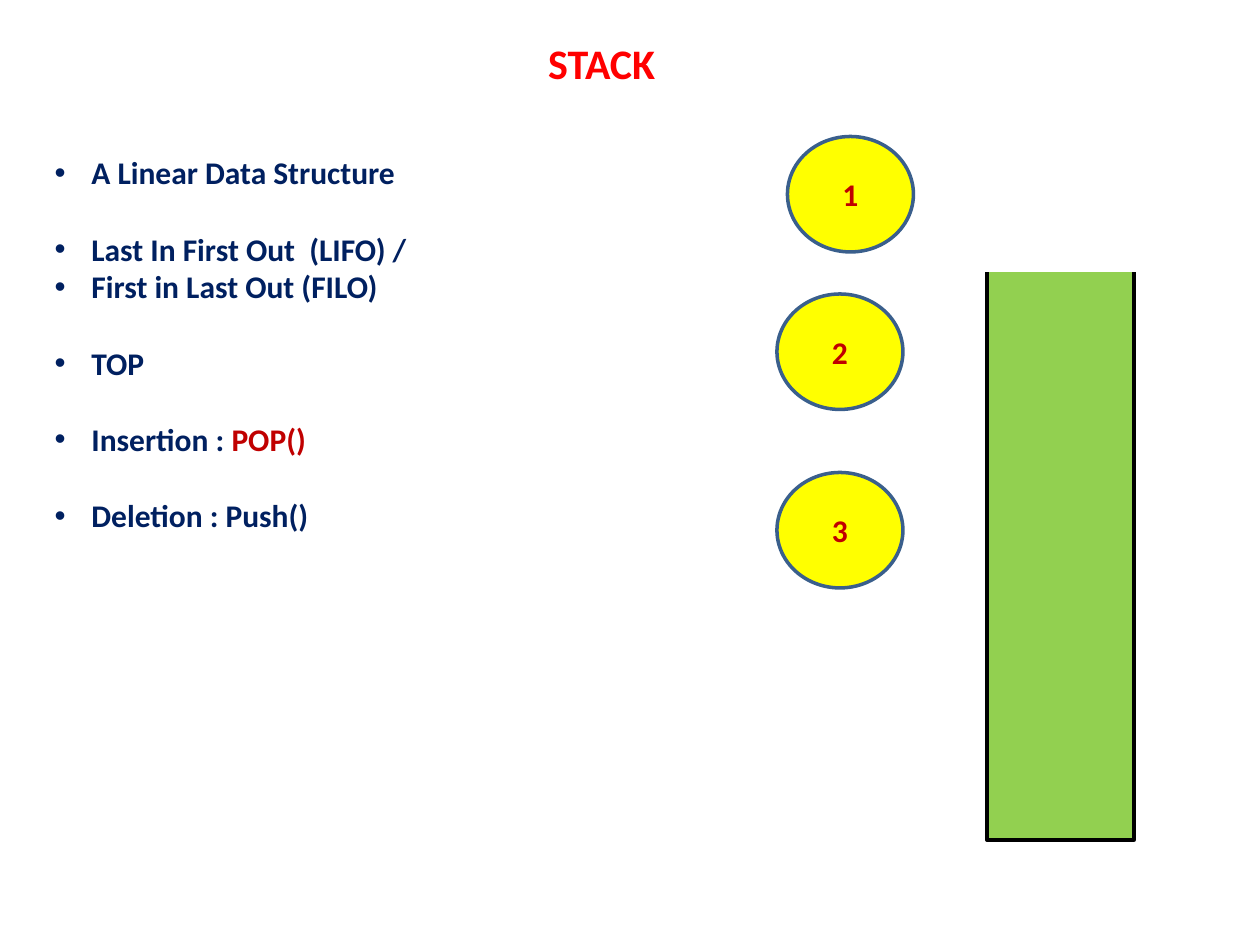
from pptx import Presentation
from pptx import util as u
from pptx.dml.color import RGBColor
from pptx.enum import shapes, text

NAVY, CRIMSON, RED = "002060", "C00000", "FF0000"
YELLOW, GREEN, BLUE = "FFFF00", "92D050", "3A5F8C"
BLACK, WHITE = "000000", "FFFFFF"
GAP = 22  # one text line between groups of points
INDENT = 21

# Each point: space before, then its runs of (wording, colour)
POINTS = [
    (0, [("A Linear Data Structure", NAVY)]),
    (GAP, [("Last In First Out  (LIFO) /", NAVY)]),
    (0, [("First in Last Out (FILO)", NAVY)]),
    (GAP, [("TOP", NAVY)]),
    (GAP, [("Insertion : ", NAVY), ("POP()", CRIMSON)]),
    (GAP, [("Deletion : Push()", NAVY)]),
]
# Stack items: label, left, top
ITEMS = [("1", 450, 78), ("2", 444, 168), ("3", 444, 270)]


def color(value):
    return RGBColor.from_string(value)


def apply_format(target, values):
    for name, value in values.items():
        setattr(target, name, value)


def place(shape, left, top, width, height):
    names = ("left", "top", "width", "height")
    apply_format(shape, dict(zip(names, map(u.Pt, (left, top, width, height)))))


def add_run(paragraph, wording, size, value):
    run = paragraph.add_run()
    run.text = wording
    apply_format(run.font, {"name": "Calibri", "size": u.Pt(size), "bold": True})
    run.font.color.rgb = color(value)


def fill_title(title):
    place(title, 306, 18, 76, 36)
    apply_format(title.text_frame, {
        "word_wrap": False,
        "auto_size": text.MSO_AUTO_SIZE.NONE,
        "vertical_anchor": text.MSO_ANCHOR.TOP,
    })
    paragraph = title.text_frame.paragraphs[0]
    paragraph.alignment = text.PP_ALIGN.LEFT
    add_run(paragraph, "STACK", 24, RED)


def fill_points(body):
    place(body, 24, 84, 258, 312)
    frame = body.text_frame
    frame.auto_size = text.MSO_AUTO_SIZE.NONE
    for index, (space, runs) in enumerate(POINTS):
        paragraph = frame.add_paragraph() if index else frame.paragraphs[0]
        paragraph.space_before = u.Pt(space)
        properties = paragraph._p.get_or_add_pPr()
        properties.set("marL", str(u.Pt(INDENT)))
        properties.set("indent", str(-u.Pt(INDENT)))
        for wording, value in runs:
            add_run(paragraph, wording, 18, value)


def add_box(parent, kind, box, fill, line):
    shape = parent.add_shape(kind, *map(u.Pt, box))
    shape.shadow.inherit = False
    shape.fill.solid()
    shape.fill.fore_color.rgb = color(fill)
    shape.line.color.rgb = color(line)
    shape.line.width = u.Pt(2)
    return shape


def add_container(slide):
    # The white band covers the top edge, so the container looks open
    group = slide.shapes.add_group_shape().shapes
    rectangle = shapes.MSO_SHAPE.RECTANGLE
    add_box(group, rectangle, (564, 144.5, 84, 335.5), GREEN, BLACK)
    add_box(group, rectangle, (534, 120, 150, 34.5), WHITE, WHITE)


def add_item(slide, label, left, top):
    oval = add_box(slide.shapes, shapes.MSO_SHAPE.OVAL, (left, top, 72, 66), YELLOW, BLUE)
    oval.text_frame.vertical_anchor = text.MSO_ANCHOR.MIDDLE
    paragraph = oval.text_frame.paragraphs[0]
    paragraph.alignment = text.PP_ALIGN.CENTER
    add_run(paragraph, label, 18, CRIMSON)


def main():
    presentation = Presentation()
    apply_format(presentation, {"slide_width": u.Pt(720), "slide_height": u.Pt(540)})
    slide = presentation.slides.add_slide(presentation.slide_layouts[1])

    # Title and list
    fill_title(slide.shapes.title)
    fill_points(slide.placeholders[1])

    # Stack and the items beside it
    add_container(slide)
    for item in ITEMS:
        add_item(slide, *item)

    presentation.save("out.pptx")


if __name__ == "__main__":
    main()
